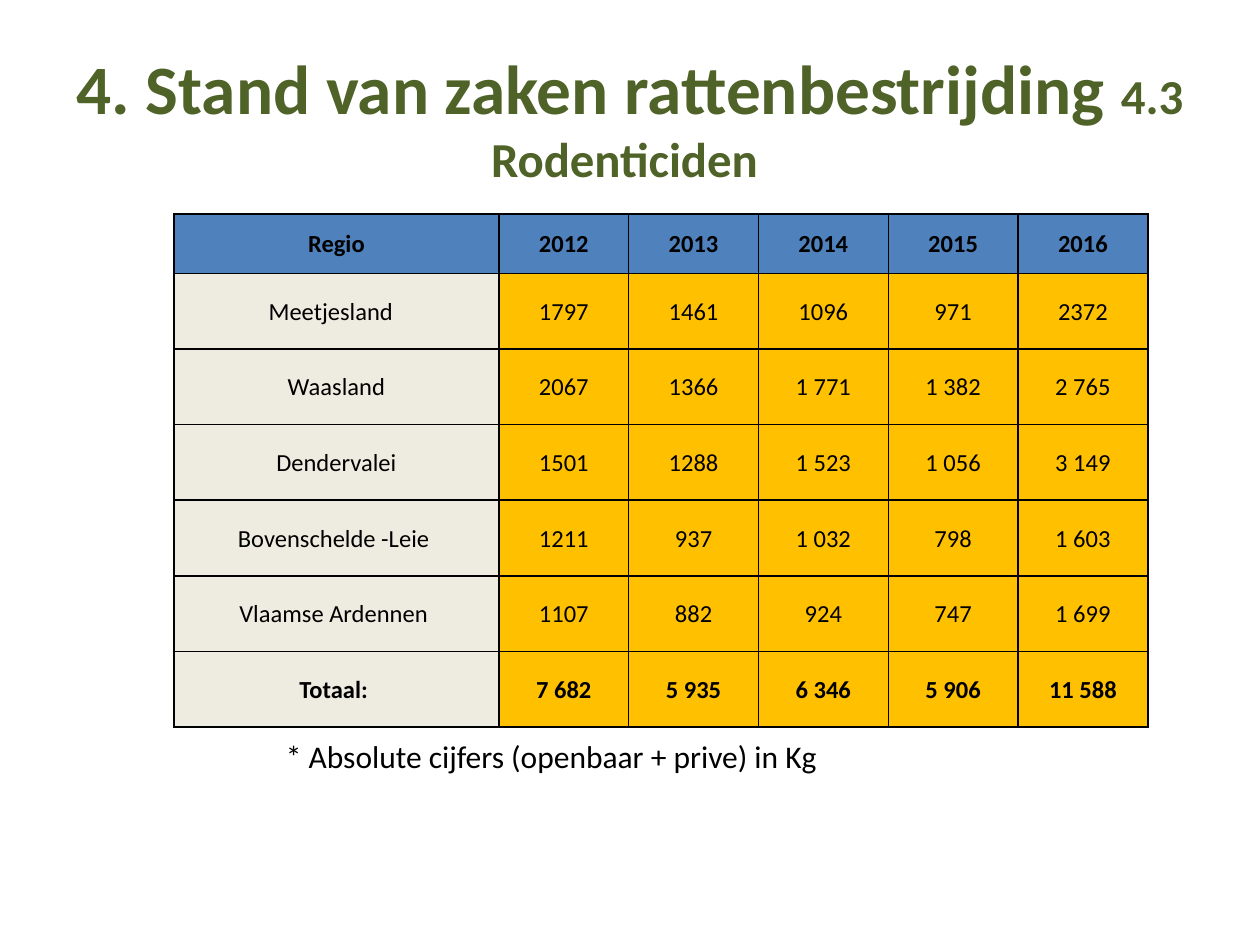
import pptx
import pptx.util
import pptx.dml.color
import pptx.enum.text
import pptx.oxml
import pptx.oxml.ns

COLORS = {
    "title": "4F6228",
    "text": "000000",
    "header": "4F81BD",
    "region": "EEECE1",
    "value": "FFC000",
    "border": "000000",
}
ROWS = [
    ["\u00a0Regio".strip(), "2012", "2013", "2014", "2015", "2016"],
    ["Meetjesland  ", "1797", "1461", "1096", "971", "2372"],
    ["Waasland", "2067", "1366", "1 771", "1 382", "2 765"],
    ["Dendervalei", "1501", "1288", "1 523", "1 056", "3 149"],
    ["Bovenschelde -Leie ", "1211", "937", "1 032", "798", "1 603"],
    ["Vlaamse Ardennen ", "1107", "882", "924", "747", "1 699"],
    ["Totaal: ", "7 682", "5 935", "6 346", "5 906", "11 588"],
]
COL_WIDTHS = [2.58] + [1.03] * 5
ROW_HEIGHTS = [0.47] + [0.6] * 6
MIDDLE = pptx.enum.text.MSO_ANCHOR.MIDDLE
CENTER = pptx.enum.text.PP_ALIGN.CENTER
Inches = pptx.util.Inches


def add_run(p, text, size, color, bold=False):
    r = p.add_run()
    r.text = text
    r.font.name = "Calibri"
    r.font.size = pptx.util.Pt(size)
    r.font.bold = bold
    r.font.color.rgb = pptx.dml.color.RGBColor.from_string(COLORS[color])


def add_borders(cell):
    tc_pr = cell._tc.get_or_add_tcPr()
    for i, side in enumerate(("lnL", "lnR", "lnT", "lnB")):
        tc_pr.insert(i, pptx.oxml.parse_xml(
            f'<a:{side} {pptx.oxml.ns.nsdecls("a")} w="12700"><a:solidFill>'
            f'<a:srgbClr val="{COLORS["border"]}"/></a:solidFill></a:{side}>'))


prs = pptx.Presentation()
prs.slide_width = Inches(10)
prs.slide_height = Inches(7.5)
s = prs.slides.add_slide(prs.slide_layouts[6])

title = s.shapes.add_textbox(Inches(0.5), Inches(0.3), Inches(9), Inches(1.25))
tf = title.text_frame
tf.word_wrap = True
tf.vertical_anchor = MIDDLE
p = tf.paragraphs[0]
p.alignment = CENTER
add_run(p, "4. Stand van zaken rattenbestrijding ", 39.6, "title", True)
add_run(p, "4.3 Rodenticiden ", 27.9, "title", True)

note = s.shapes.add_textbox(Inches(2.17), Inches(5.8), Inches(5.28), Inches(0.4))
tf = note.text_frame
tf.word_wrap = True
add_run(tf.paragraphs[0], "* Absolute cijfers (openbaar + prive) in Kg", 18, "text")

table = s.shapes.add_table(
    len(ROWS), len(COL_WIDTHS), Inches(1.38), Inches(1.7),
    Inches(sum(COL_WIDTHS)), Inches(sum(ROW_HEIGHTS))).table
for col, width in zip(table.columns, COL_WIDTHS):
    col.width = Inches(width)
for row, height in zip(table.rows, ROW_HEIGHTS):
    row.height = Inches(height)

for i, values in enumerate(ROWS):
    for j, value in enumerate(values):
        cell = table.cell(i, j)
        fill = "header" if i == 0 else "region" if j == 0 else "value"
        cell.fill.solid()
        cell.fill.fore_color.rgb = pptx.dml.color.RGBColor.from_string(COLORS[fill])
        cell.vertical_anchor = MIDDLE
        cell.margin_left = cell.margin_right = cell.margin_top = Inches(0.01)
        cell.margin_bottom = 0
        add_borders(cell)
        p = cell.text_frame.paragraphs[0]
        p.alignment = CENTER
        add_run(p, value, 14, "text", i in (0, len(ROWS) - 1))

prs.save("out.pptx")
